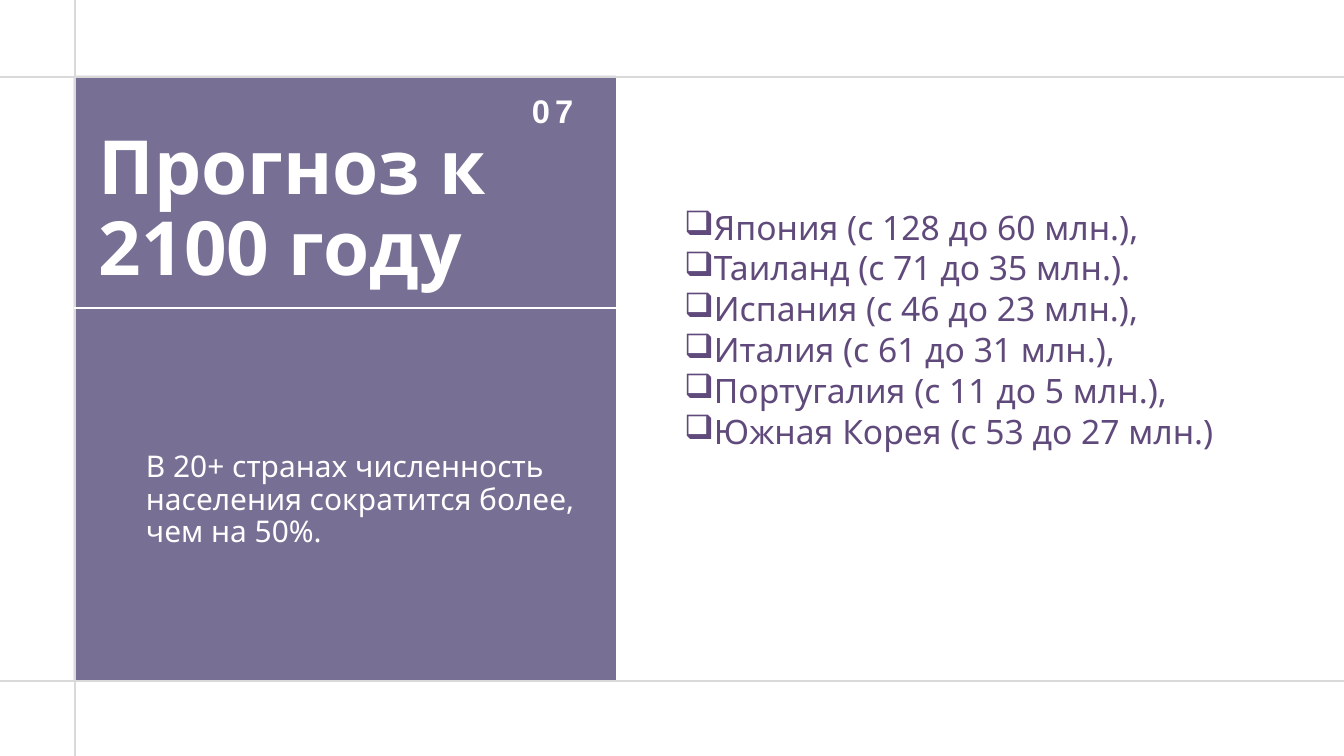
"""Builds a slide on the population forecast for 2100."""
import pptx
import pptx.util
import pptx.dml.color
import pptx.enum.shapes
import pptx.enum.text
import pptx.oxml.ns
from lxml import etree

PX = 914400 / 67.2
HUES = {"panel": "786F94", "rule": "D9D9D9", "white": "FFFFFF", "list": "604A7B"}


def px(*nums):
    return [pptx.util.Emu(round(num * PX)) for num in nums]


def write(box, lines, size, hue, font="Noto Sans", bold=False, track=0, lead=0.9, gap=0, mark=None):
    frame = box.text_frame
    frame.word_wrap = True
    frame.auto_size = pptx.enum.text.MSO_AUTO_SIZE.NONE
    frame.vertical_anchor = pptx.enum.text.MSO_ANCHOR.TOP
    frame.margin_left = frame.margin_right = frame.margin_top = frame.margin_bottom = 0
    frame.text = "\n".join(lines)
    for row, para in enumerate(frame.paragraphs):
        para.alignment = pptx.enum.text.PP_ALIGN.LEFT
        para.line_spacing = lead
        para.space_before = pptx.util.Pt(gap if row else 0)
        if mark:
            props = para._p.get_or_add_pPr()
            props.set("marL", "228600")
            props.set("indent", "-228600")
            etree.SubElement(props, pptx.oxml.ns.qn("a:buChar")).set("char", mark)
        for run in para.runs:
            run.font.name = font
            run.font.size = pptx.util.Pt(size)
            run.font.bold = bold
            run.font.color.rgb = pptx.dml.color.RGBColor.from_string(HUES[hue])
            if track:
                run._r.get_or_add_rPr().set("spc", str(track))


deck = pptx.Presentation()
deck.slide_width, deck.slide_height = px(1344, 756)
slide = deck.slides.add_slide(deck.slide_layouts[5])
shapes = slide.shapes

panel = shapes.add_shape(pptx.enum.shapes.MSO_SHAPE.RECTANGLE, *px(74, 76, 542, 604))
panel.shadow.inherit = False
panel.fill.solid()
panel.fill.fore_color.rgb = pptx.dml.color.RGBColor.from_string(HUES["panel"])
panel.line.fill.background()

rules = [
    (0, 681, 1344, 681, "rule"),
    (75, 756, 75, 0, "rule"),
    (0, 77, 1344, 77, "rule"),
    (74, 308, 616, 308, "white"),
]
for *ends, hue in rules:
    rule = shapes.add_connector(pptx.enum.shapes.MSO_CONNECTOR.STRAIGHT, *px(*ends))
    rule.line.width = pptx.util.Pt(2.25)
    rule.line.color.rgb = pptx.dml.color.RGBColor.from_string(HUES[hue])
    etree.SubElement(rule._element.spPr, pptx.oxml.ns.qn("a:effectLst"))

title = shapes.title
title.left, title.top, title.width, title.height = px(532, 91, 69, 40)
shapes._spTree.append(title._element)
write(title, ["07"], 35, "white", font="Arial", bold=True, track=530, lead=1)

head = shapes.add_textbox(*px(99, 130, 404, 178))
write(head, ["Прогноз к 2100 году"], 80, "white", bold=True, track=-10)

note = shapes.add_textbox(*px(146, 452, 433, 110))
write(note, ["В 20+ странах численность населения сократится более, чем на 50%."], 32, "white")

lands = [
    "Япония (с 128 до 60 млн.),",
    "Таиланд (с 71 до 35 млн.).",
    "Испания (с 46 до 23 млн.),",
    "Италия (с 61 до 31 млн.),",
    "Португалия (с 11 до 5 млн.),",
    "Южная Корея (с 53 до 27 млн.)",
]
roll = shapes.add_textbox(*px(684, 211, 548, 270))
write(roll, lands, 36, "list", gap=5, mark="❑")

deck.save("out.pptx")
